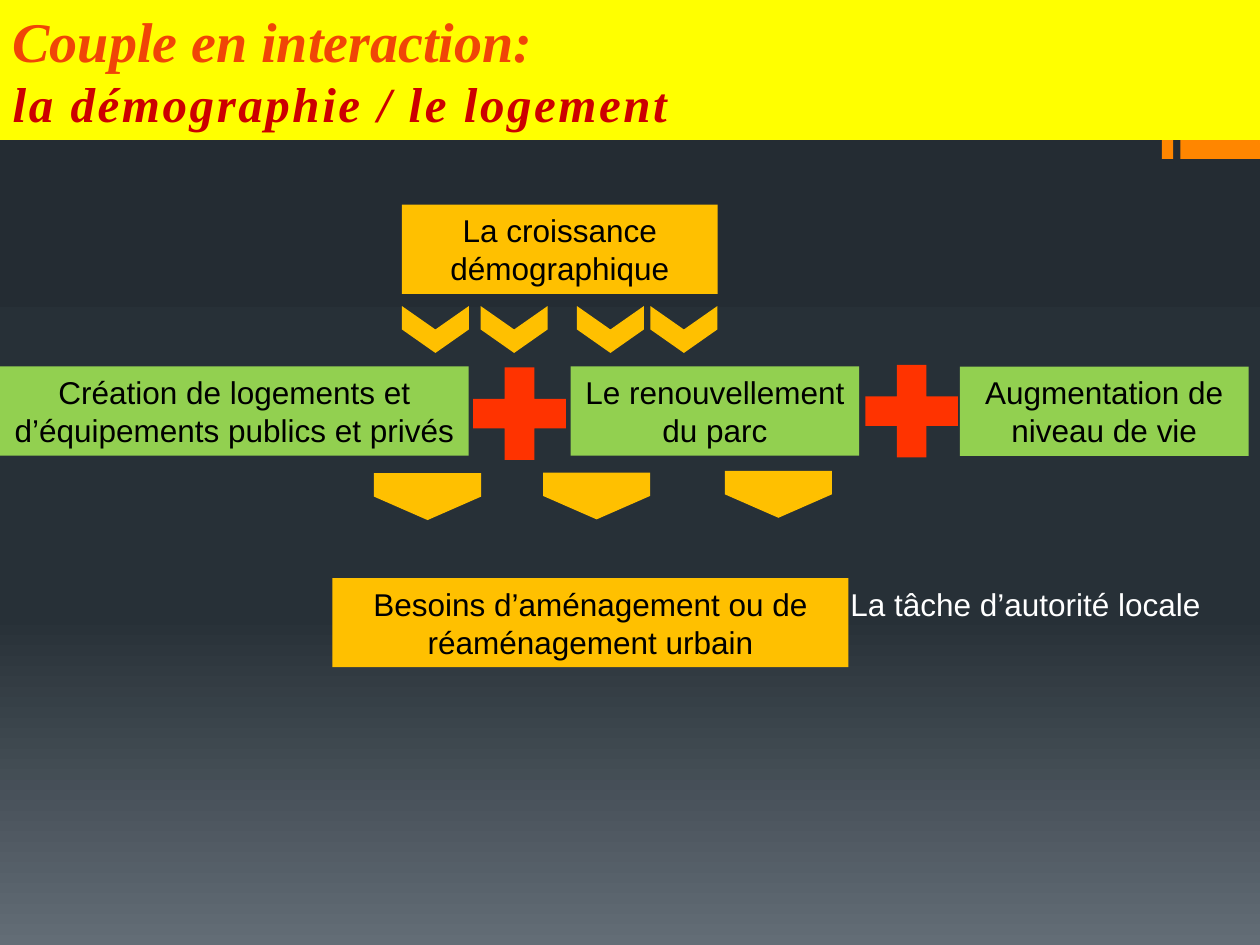
from copy import deepcopy
from dataclasses import dataclass

from pptx import Presentation
from pptx.dml.color import RGBColor
from pptx.enum import shapes, text
from pptx.oxml.ns import qn
from pptx.util import Pt

SHAPE = shapes.MSO_SHAPE
GOLD, GREEN, RED, ORANGE = "FFC000", "92D050", "FF3300", "FF8600"


@dataclass
class Block:
    """A filled shape; lengths in points, frame taken before rotation."""
    left: float
    top: float
    width: float
    height: float
    color: str
    label: str = ""
    kind: SHAPE = SHAPE.RECTANGLE
    rotation: float = 0


def rgb(color: str) -> RGBColor:
    return RGBColor.from_string(color)


def set_gradient(fill, stops: list[tuple[int, str]]) -> None:
    """Vertical gradient, top to bottom, with stops in percent."""
    fill.gradient()
    fill.gradient_angle = 270
    gs_list = fill._xPr.find(qn("a:gradFill")).find(qn("a:gsLst"))
    while len(gs_list) < len(stops):
        gs_list.append(deepcopy(gs_list[0]))
    for gs, stop, (percent, color) in zip(gs_list, fill.gradient_stops, stops):
        stop.color.rgb = rgb(color)
        gs.set("pos", str(percent * 1000))


def set_font(p, name: str, size: float, color: str) -> None:
    p.font.name = name
    p.font.size = Pt(size)
    p.font.color.rgb = rgb(color)


def add_block(s, block: Block):
    frame = (block.left, block.top, block.width, block.height)
    sp = s.shapes.add_shape(block.kind, *map(Pt, frame))
    sp.shadow.inherit = False
    sp.rotation = block.rotation
    sp.fill.solid()
    sp.fill.fore_color.rgb = rgb(block.color)
    sp.line.fill.background()
    if block.label:
        sp.text_frame.word_wrap = True
        p = sp.text_frame.paragraphs[0]
        p.text = block.label
        p.alignment = text.PP_ALIGN.CENTER
        set_font(p, "Arial", 18, "000000")
    return sp


def add_title(s) -> None:
    sp = s.shapes.title
    sp.left, sp.top, sp.width, sp.height = Pt(0), Pt(0), Pt(720), Pt(80)
    sp.fill.solid()
    sp.fill.fore_color.rgb = rgb("FFFF00")
    tf = sp.text_frame
    tf.auto_size = text.MSO_AUTO_SIZE.NONE
    tf.vertical_anchor = text.MSO_ANCHOR.TOP
    tf.text = "Couple en interaction:\nla démographie / le logement"
    for p, size, color in zip(tf.paragraphs, (32, 28), ("F04507", "CC0000")):
        p.alignment = text.PP_ALIGN.LEFT
        set_font(p, "Times New Roman", size, color)
        p.font.bold = p.font.italic = True
    first, second = (p.runs[0] for p in tf.paragraphs)
    set_gradient(first.font.fill, [(0, "FF9579"), (75, "F04507"), (100, "A44700")])
    second._r.get_or_add_rPr().set("spc", "150")
    # The title band lies over the orange tabs
    s.shapes._spTree.append(sp._element)


def add_note(s) -> None:
    sp = s.shapes.add_textbox(Pt(478.8), Pt(330.5), Pt(216.7), Pt(29))
    sp.text_frame.word_wrap = False
    p = sp.text_frame.paragraphs[0]
    p.text = "La tâche d’autorité locale"
    set_font(p, "Arial", 18, "FFFFFF")


TABS = [Block(left, 45.4, width, 45.4, ORANGE)
        for left, width in ((663.9, 6.5), (674.6, 45.4))]

BOXES = [
    Block(229.7, 116.9, 180.4, 51, GOLD, "La croissance démographique"),
    Block(0, 209.4, 267.8, 51, GREEN,
          "Création de logements et d’équipements publics et privés"),
    Block(326, 209.4, 165, 51, GREEN, "Le renouvellement du parc"),
    Block(548.5, 209.5, 165, 51, GREEN, "Augmentation de niveau de vie"),
    Block(190, 330.3, 294.8, 51, GOLD,
          "Besoins d’aménagement ou de réaménagement urbain"),
]

# Downward arrows are right-pointing shapes turned a quarter
CHEVRONS = [Block(left, 169.2, 26.8, 38.2, GOLD, kind=SHAPE.CHEVRON, rotation=90)
            for left in (235.4, 280.4, 335.4, 377.4)]
PENTAGONS = [Block(left, top, 26.8, 61.2, GOLD, kind=SHAPE.PENTAGON, rotation=90)
             for left, top in ((230.9, 253.2), (327.5, 252.8), (431.4, 251.9))]
PLUSES = [Block(left, top, 72, 72, RED, kind=SHAPE.MATH_PLUS)
          for left, top in ((260.9, 200.4), (485, 199))]


def main() -> None:
    prs = Presentation()
    prs.slide_width, prs.slide_height = Pt(720), Pt(540)
    s = prs.slides.add_slide(prs.slide_layouts[5])
    set_gradient(s.background.fill, [(0, "242C33"), (65, "273037"), (100, "636D76")])

    # Header
    for tab in TABS:
        add_block(s, tab)
    add_title(s)

    # Diagram
    for block in BOXES + CHEVRONS + PENTAGONS + PLUSES:
        add_block(s, block)
    add_note(s)

    prs.save("out.pptx")


if __name__ == "__main__":
    main()
